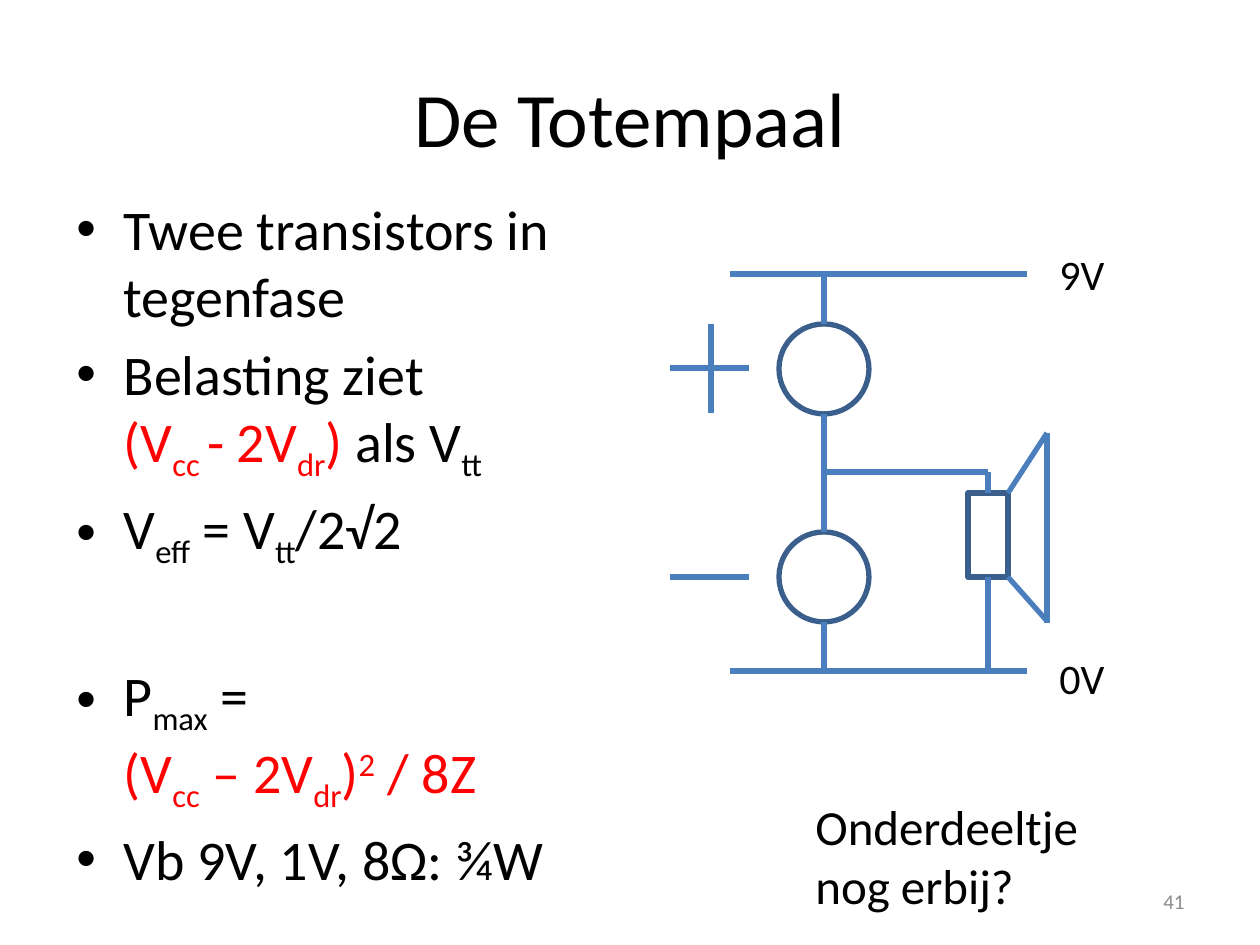
"""Build the totem-pole amplifier slide with its circuit sketch."""
from lxml.etree import SubElement
from pptx import Presentation
from pptx.dml.color import RGBColor
from pptx.enum.shapes import MSO_CONNECTOR, MSO_SHAPE
from pptx.enum.text import MSO_ANCHOR, PP_ALIGN
from pptx.oxml.ns import qn
from pptx.util import Emu, Pt

theme = {
    "font": "Calibri",
    "ink": RGBColor.from_string("000000"),
    "red": RGBColor.from_string("FF0000"),
    "grey": RGBColor.from_string("8C8C8C"),
    "wire": RGBColor.from_string("4B7EBC"),
    "edge": RGBColor.from_string("3A5F8C"),
    "title": Pt(44),
    "body": Pt(32),
    "note": Pt(28),
    "label": Pt(24),
    "page": Pt(12),
    "line": Pt(3),
}
PX = 914400 / 126

deck = Presentation()
deck.slide_width, deck.slide_height = Emu(9144000), Emu(6858000)
slide = deck.slides.add_slide(deck.slide_layouts[6])
shapes = slide.shapes


def text(box, words, size, color="ink", align=PP_ALIGN.LEFT, anchor=MSO_ANCHOR.TOP):
    frame = shapes.add_textbox(*[Emu(round(v * PX)) for v in box]).text_frame
    frame.word_wrap = True
    frame.vertical_anchor = anchor
    para = frame.paragraphs[0]
    para.text = words
    para.alignment = align
    para.font.name = theme["font"]
    para.font.size = theme[size]
    para.font.color.rgb = theme[color]
    return frame


def wire(*ends):
    line = shapes.add_connector(
        MSO_CONNECTOR.STRAIGHT, *[Emu(round(v * PX)) for v in ends]
    )
    line.line.color.rgb = theme["wire"]
    line.line.width = theme["line"]
    SubElement(line._element.spPr, qn("a:effectLst"))
    return line


text((63, 38, 1134, 157), "De Totempaal", "title",
     align=PP_ALIGN.CENTER, anchor=MSO_ANCHOR.MIDDLE)

points = [
    (6, [("ink", ["Twee transistors in tegenfase"])]),
    (6, [("ink", ["Belasting ziet", "\n"]),
         ("red", ["(V", "_cc ", "- 2V", "_dr", ") "]),
         ("ink", ["als V", "_tt"])]),
    (6, [("ink", ["V", "_eff", " = V", "_tt", "/2√2"])]),
    (52, [("ink", ["P", "_max", " =", "\n"]),
          ("red", ["(V", "_cc", " – 2V", "_dr", ")", "^2", " / 8Z"])]),
    (6, [("ink", ["Vb 9V, 1V, 8Ω: ¾W"])]),
]
shift = {"_": "-25000", "^": "30000"}
frame = text((64, 188, 576, 731), "", "body")
for i, (gap, parts) in enumerate(points):
    para = frame.add_paragraph() if i else frame.paragraphs[0]
    para.space_before = Pt(gap)
    props = para._p.get_or_add_pPr()
    props.set("marL", "342900")
    props.set("indent", "-342900")
    for font in props.findall(qn("a:defRPr")):
        props.remove(font)
    SubElement(props, qn("a:buFont"), typeface="Arial")
    SubElement(props, qn("a:buChar"), char="•")
    para.font.name = theme["font"]
    para.font.size = theme["body"]
    for color, words in parts:
        for word in words:
            if word == "\n":
                para.add_line_break()
                continue
            run = para.add_run()
            run.text = word.lstrip("_^")
            run.font.color.rgb = theme[color]
            if word[0] in shift:
                run._r.get_or_add_rPr().set("baseline", shift[word[0]])

mid, tap, load = 824, 472, 988
top, low = 274, 671
symbols = [
    (MSO_SHAPE.OVAL, 779, 324, 90, 90),
    (MSO_SHAPE.OVAL, 779, 532, 90, 90),
    (MSO_SHAPE.RECTANGLE, 968, 493, 40, 84),
]
for kind, *box in symbols:
    part = shapes.add_shape(kind, *[Emu(round(v * PX)) for v in box])
    part.shadow.inherit = False
    part.fill.background()
    part.line.color.rgb = theme["edge"]
    part.line.width = theme["line"]

for ends in [
    (730, top, 1027, top),
    (730, low, 1027, low),
    (mid, top, mid, 324),
    (mid, 414, mid, 532),
    (mid, 622, mid, low),
    (mid, tap, load, tap),
    (1008, 493, 1047, 433),
    (1047, 433, 1047, 623),
    (1008, 577, 1047, 621),
    (670, 368, 749, 368),
    (711, 324, 711, 413),
    (670, 577, 749, 577),
]:
    wire(*ends)
wire(load, 493, load, tap).begin_connect(part, 0)
wire(load, 577, load, low).begin_connect(part, 2)

for y, words in [(242, "9V"), (646, "0V")]:
    text((1047, y, 100, 63), words, "label")
text((803, 790, 297, 131), "Onderdeeltje nog erbij?", "note")
text((903, 876, 294, 50), "41", "page", "grey", PP_ALIGN.RIGHT, MSO_ANCHOR.MIDDLE)

deck.save("out.pptx")
